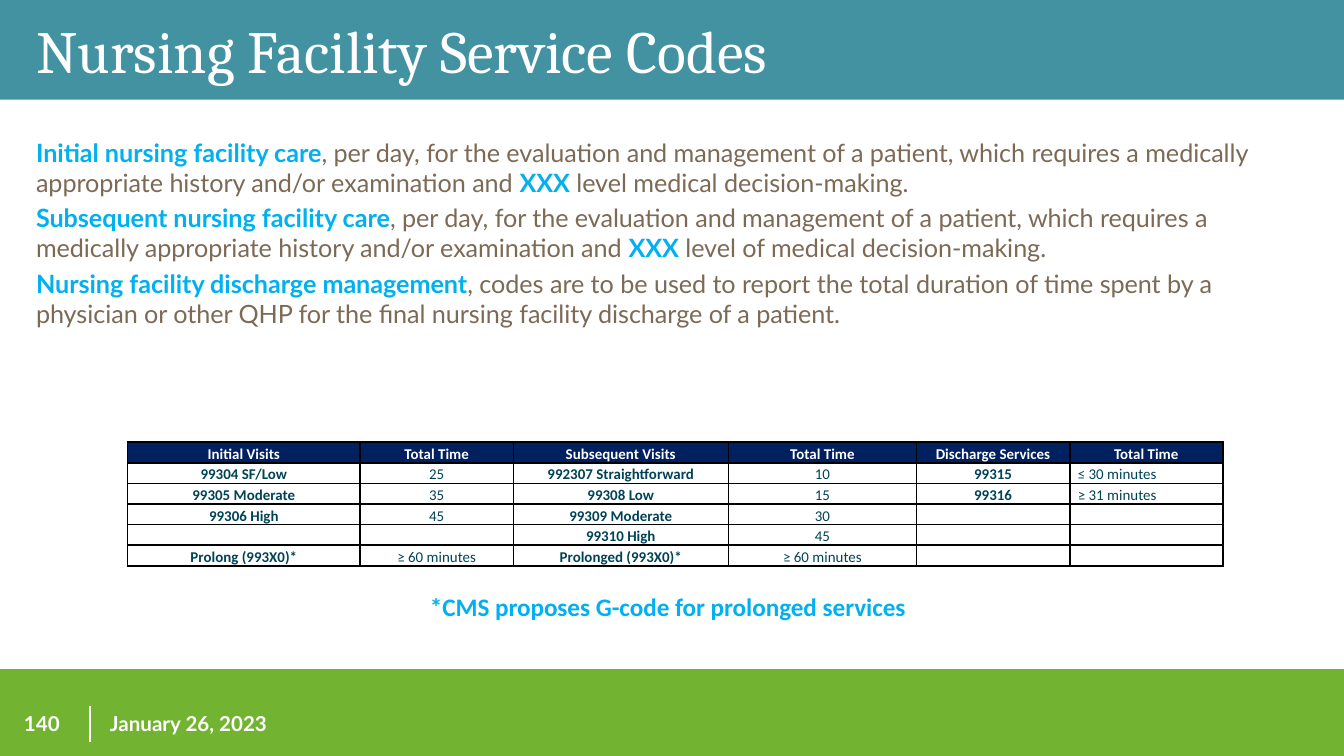
from lxml.etree import SubElement
from pptx import Presentation
from pptx.dml.color import RGBColor
from pptx.enum.shapes import MSO_CONNECTOR, MSO_SHAPE
from pptx.enum.text import MSO_ANCHOR, MSO_AUTO_SIZE, PP_ALIGN
from pptx.oxml.ns import qn
from pptx.util import Inches, Pt

WHITE = RGBColor(0xFF, 0xFF, 0xFF)
BLACK = RGBColor(0x00, 0x00, 0x00)
TEAL = RGBColor(0x43, 0x92, 0xA2)
GREEN = RGBColor(0x72, 0xB4, 0x31)
SKY = RGBColor(0x00, 0xB0, 0xF0)
BROWN = RGBColor(0x7C, 0x6A, 0x55)
NAVY = RGBColor(0x00, 0x20, 0x60)
DARK_TEAL = RGBColor(0x00, 0x43, 0x57)

SLIDE_WIDTH = Inches(10)
SLIDE_HEIGHT = SLIDE_WIDTH * 9 // 16

TITLE_FORMAT = {"name": "Cambria", "size": Pt(32), "bold": False, "color": WHITE}
FOOTER_FORMAT = {"name": "Lato", "size": Pt(11), "bold": True, "color": WHITE}
TERM_FORMAT = {"name": "Lato", "size": Pt(13.5), "bold": True, "color": SKY}
BODY_FORMAT = TERM_FORMAT | {"bold": False, "color": BROWN}
NOTE_FORMAT = TERM_FORMAT | {"name": "Calibri"}
HEADER_FORMAT = {"name": "Calibri", "size": Pt(8), "bold": True, "color": WHITE}
CODE_FORMAT = HEADER_FORMAT | {"color": DARK_TEAL}
TIME_FORMAT = CODE_FORMAT | {"bold": False}

EVALUATION = (
    ", per day, for the evaluation and management of a patient, which requires "
    "a medically appropriate history and/or examination and "
)
DEFINITIONS = [
    [("Initial nursing facility care", TERM_FORMAT), (EVALUATION, BODY_FORMAT),
     ("XXX", TERM_FORMAT), (" level medical decision-making.", BODY_FORMAT)],
    [("Subsequent nursing facility care", TERM_FORMAT), (EVALUATION, BODY_FORMAT),
     ("XXX", TERM_FORMAT), (" level of medical decision-making.", BODY_FORMAT)],
    [("Nursing facility discharge management", TERM_FORMAT),
     (", codes are to be used to report the total duration of time spent by a physician "
      "or other QHP for the final nursing facility discharge of a patient.", BODY_FORMAT)],
]

COLUMN_WIDTHS = [1.73, 1.14, 1.6, 1.4, 1.14, 1.14]
SERVICE_CODES = [
    ["Initial Visits", "Total Time", "Subsequent Visits", "Total Time",
     "Discharge Services", "Total Time"],
    ["99304 SF/Low", "25", "992307 Straightforward", "10", "99315", "≤ 30 minutes"],
    ["99305 Moderate", "35", "99308 Low", "15", "99316", "≥ 31 minutes"],
    ["99306 High", "45", "99309 Moderate", "30", "", ""],
    ["", "", "99310 High", "45", "", ""],
    ["Prolong (993X0)*", "≥ 60 minutes", "Prolonged (993X0)*", "≥ 60 minutes", "", ""],
]


def across(percent):
    return round(SLIDE_WIDTH * percent / 100)


def down(percent):
    return round(SLIDE_HEIGHT * percent / 100)


def area(left, top, width, height):
    return across(left), down(top), across(width), down(height)


def add_run(paragraph, text, values):
    run = paragraph.add_run()
    run.text = text
    for name, value in values.items():
        if name == "color":
            run.font.color.rgb = value
        else:
            setattr(run.font, name, value)


def add_band(slide, box, color):
    band = slide.shapes.add_shape(MSO_SHAPE.RECTANGLE, *box)
    band.shadow.inherit = False
    band.fill.solid()
    band.fill.fore_color.rgb = color
    band.line.fill.background()


def add_divider(slide, left, top, bottom):
    divider = slide.shapes.add_connector(
        MSO_CONNECTOR.STRAIGHT, across(left), down(top), across(left), down(bottom))
    divider.line.color.rgb = WHITE
    divider.line.width = Pt(1)
    SubElement(divider._element.spPr, qn("a:effectLst"))


def add_text(slide, box, paragraphs, anchor=MSO_ANCHOR.TOP):
    frame = slide.shapes.add_textbox(*box).text_frame
    frame.word_wrap = True
    frame.vertical_anchor = anchor
    for index, runs in enumerate(paragraphs):
        paragraph = frame.add_paragraph() if index else frame.paragraphs[0]
        if index:
            paragraph.space_before = Pt(2.7)
        for text, values in runs:
            add_run(paragraph, text, values)


def set_title(slide, box, text):
    title = slide.shapes.title
    title.left, title.top, title.width, title.height = box
    frame = title.text_frame
    frame.auto_size = MSO_AUTO_SIZE.NONE
    frame.vertical_anchor = MSO_ANCHOR.MIDDLE
    paragraph = frame.paragraphs[0]
    paragraph.alignment = PP_ALIGN.LEFT
    add_run(paragraph, text, TITLE_FORMAT)


def add_borders(cell):
    properties = cell._tc.get_or_add_tcPr()
    for side in ("lnL", "lnR", "lnT", "lnB"):
        border = SubElement(properties, qn(f"a:{side}"), w=str(Pt(1)))
        fill = SubElement(border, qn("a:solidFill"))
        SubElement(fill, qn("a:srgbClr"), val=str(BLACK))


def fill_cell(cell, text, row, column):
    add_borders(cell)
    margins = {"margin_left": Inches(0.06), "margin_right": Inches(0.06),
               "margin_top": 0, "margin_bottom": 0}
    for name, value in margins.items():
        setattr(cell, name, value)
    if row == 0:
        cell.fill.solid()
        cell.fill.fore_color.rgb = NAVY
        values = HEADER_FORMAT
    else:
        cell.fill.background()
        values = TIME_FORMAT if column % 2 else CODE_FORMAT
    paragraph = cell.text_frame.paragraphs[0]
    paragraph.line_spacing = 1.15
    left_aligned = row > 0 and column == len(COLUMN_WIDTHS) - 1
    paragraph.alignment = PP_ALIGN.LEFT if left_aligned else PP_ALIGN.CENTER
    if text:
        add_run(paragraph, text, values)
    else:
        SubElement(paragraph._p, qn("a:endParaRPr"), sz="800")


def add_code_table(slide, box):
    table = slide.shapes.add_table(len(SERVICE_CODES), len(COLUMN_WIDTHS), *box).table
    table.first_row = False
    table.horz_banding = False
    for column, width in zip(table.columns, COLUMN_WIDTHS):
        column.width = Inches(width)
    for row, texts in enumerate(SERVICE_CODES):
        for column, text in enumerate(texts):
            fill_cell(table.cell(row, column), text, row, column)


def main():
    presentation = Presentation()
    presentation.slide_width = SLIDE_WIDTH
    presentation.slide_height = SLIDE_HEIGHT
    slide = presentation.slides.add_slide(presentation.slide_layouts[5])

    add_band(slide, area(0, 88.5, 100, 11.5), GREEN)
    add_band(slide, area(0, 0, 100, 13.2), TEAL)
    title_element = slide.shapes.title._element
    title_element.getparent().append(title_element)
    set_title(slide, area(1.7, -2.67, 96.7, 18.5), "Nursing Facility Service Codes")

    add_divider(slide, 6.7, 93.33, 98.13)
    for left, width, text in [(0.8, 6.1, "140"), (7.2, 20, "January 26, 2023")]:
        add_text(slide, area(left, 93.33, width, 4.8), [[(text, FOOTER_FORMAT)]],
                 MSO_ANCHOR.MIDDLE)

    add_text(slide, area(1.7, 17.25, 96.7, 71.1), DEFINITIONS)
    add_code_table(slide, area(9.5, 58.5, 81.5, 15.85))
    add_text(slide, area(31, 77.33, 38.5, 5.87),
             [[("*CMS proposes G-code for prolonged services", NOTE_FORMAT)]])
    presentation.save("out.pptx")


if __name__ == "__main__":
    main()
